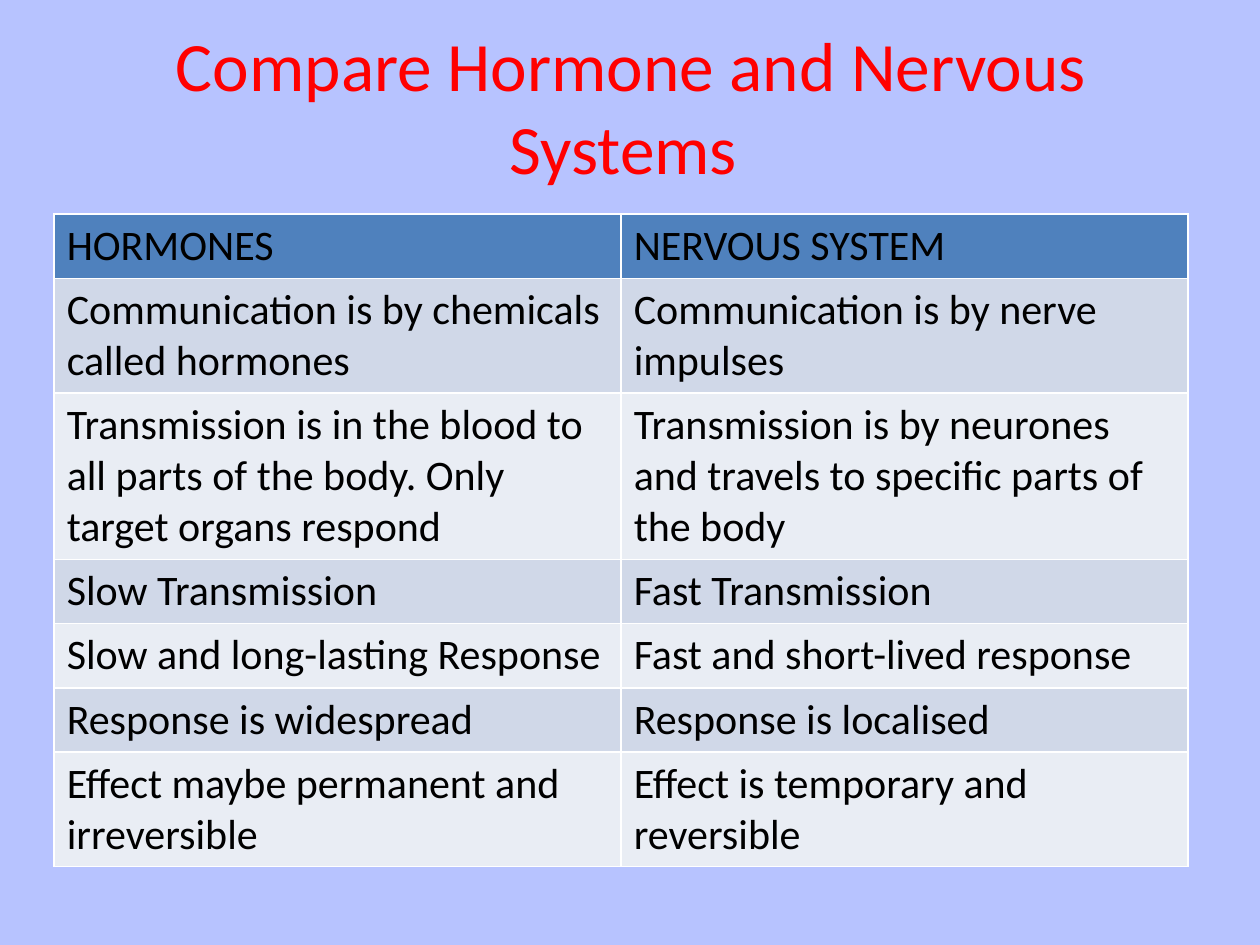
from lxml.etree import SubElement
from pptx import Presentation
from pptx.dml.color import RGBColor
from pptx.enum.text import MSO_ANCHOR, PP_ALIGN
from pptx.oxml.ns import qn
from pptx.util import Inches, Pt

BACKGROUND = RGBColor(0xB7, 0xC3, 0xFF)
RED = RGBColor(0xFF, 0x00, 0x00)
BLACK = RGBColor(0x00, 0x00, 0x00)
WHITE = RGBColor(0xFF, 0xFF, 0xFF)
HEADER_BLUE = RGBColor(0x4F, 0x81, 0xBD)
BAND_DARK = RGBColor(0xD0, 0xD8, 0xE8)
BAND_LIGHT = RGBColor(0xE9, 0xED, 0xF4)

# Row heights by the number of text lines
LINE_HEIGHTS = {1: 0.51, 2: 0.91, 3: 1.32}
COMPARISON = [
    (1, "HORMONES", "NERVOUS SYSTEM"),
    (2, "Communication is by chemicals called hormones",
     "Communication is by nerve impulses"),
    (3, "Transmission is in the blood to all parts of the body. Only target organs respond",
     "Transmission is by neurones and travels to specific parts of the body"),
    (1, "Slow Transmission", "Fast Transmission"),
    (1, "Slow and long-lasting Response", "Fast and short-lived response"),
    (1, "Response is widespread", "Response is localised"),
    (2, "Effect maybe permanent and irreversible", "Effect is temporary and reversible"),
]


def format_run(run, size, color):
    run.font.name = "Calibri"
    run.font.size = Pt(size)
    run.font.bold = False
    run.font.color.rgb = color


def add_borders(cell, color):
    """Draw a 1 pt line on all sides; call before the cell's fill is set."""
    properties = cell._tc.get_or_add_tcPr()
    for side in ("lnL", "lnR", "lnT", "lnB"):
        line = SubElement(properties, qn(f"a:{side}"), w=str(Pt(1)))
        fill = SubElement(line, qn("a:solidFill"))
        SubElement(fill, qn("a:srgbClr"), val=str(color))


prs = Presentation()
prs.slide_width = Inches(10)
prs.slide_height = Inches(7.5)
slide = prs.slides.add_slide(prs.slide_layouts[6])
slide.background.fill.solid()
slide.background.fill.fore_color.rgb = BACKGROUND

title = slide.shapes.add_textbox(Inches(0.51), Inches(0.21), Inches(9), Inches(1.25)).text_frame
title.word_wrap = True
title.vertical_anchor = MSO_ANCHOR.MIDDLE
title.text = "Compare Hormone and Nervous Systems "
title.paragraphs[0].alignment = PP_ALIGN.CENTER
format_run(title.paragraphs[0].runs[0], 39.6, RED)

table_height = sum(LINE_HEIGHTS[lines] for lines, *_ in COMPARISON)
table = slide.shapes.add_table(
    len(COMPARISON), 2, Inches(0.43), Inches(1.7), Inches(9), Inches(table_height)).table
for row_index, (lines, *texts) in enumerate(COMPARISON):
    table.rows[row_index].height = Inches(LINE_HEIGHTS[lines])
    if row_index == 0:
        row_color = HEADER_BLUE
    else:
        row_color = BAND_DARK if row_index % 2 else BAND_LIGHT
    for column_index, text in enumerate(texts):
        cell = table.cell(row_index, column_index)
        add_borders(cell, WHITE)
        cell.fill.solid()
        cell.fill.fore_color.rgb = row_color
        cell.text_frame.text = text
        format_run(cell.text_frame.paragraphs[0].runs[0], 24, BLACK)

prs.save("out.pptx")
